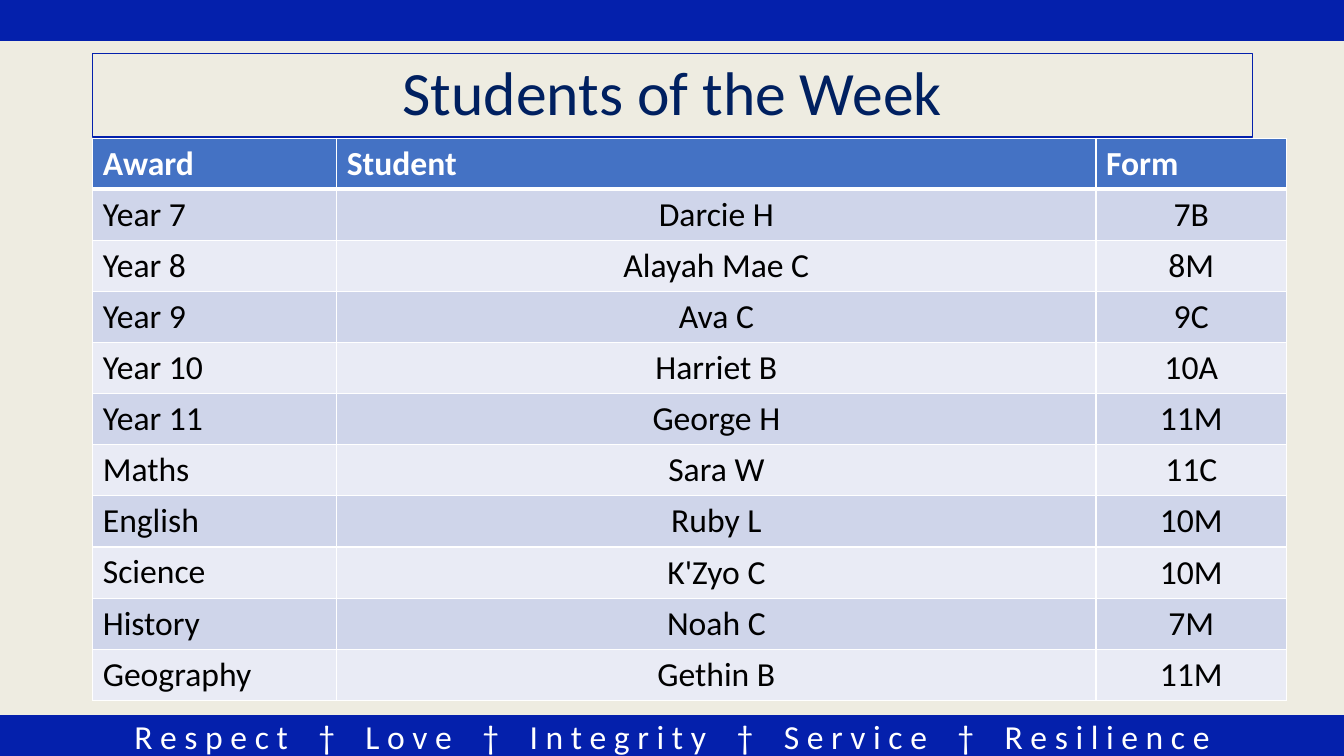
from lxml import etree
from pptx import Presentation
from pptx import util as u
from pptx.dml.color import RGBColor
from pptx.enum import shapes, text
from pptx.oxml.ns import qn

COLOURS = {
    "background": "EEECE1",
    "band": "0420AC",
    "title": "002060",
    "white": "FFFFFF",
    "black": "000000",
    "header": "4472C4",
    "odd_row": "CFD5EA",
    "even_row": "E9EBF5",
}
FONT = "Calibri"
VALUES = ["Respect", "Love", "Integrity", "Service", "Resilience"]
HEADINGS = ["Award", "Student", "Form"]
AWARDS = [
    ("Year 7", "Darcie H", "7B"),
    ("Year 8", "Alayah Mae C", "8M"),
    ("Year 9", "Ava C", "9C"),
    ("Year 10", "Harriet B", "10A"),
    ("Year 11", "George H", "11M"),
    ("Maths", "Sara W", "11C"),
    ("English", "Ruby L", "10M"),
    ("Science", "K'Zyo C", "10M"),
    ("History", "Noah C", "7M"),
    ("Geography", "Gethin B", "11M"),
]
COLUMN_SHARES = [0.2044, 0.636, 0.1596]


def colour(name):
    return RGBColor.from_string(COLOURS[name])


def style(paragraph, size, colour_name, alignment, bold=False):
    paragraph.alignment = alignment
    paragraph.font.name = FONT
    paragraph.font.size = u.Pt(size)
    paragraph.font.bold = bold
    paragraph.font.color.rgb = colour(colour_name)


def add_box(slide, left, top, width, height, line_width, fill=None):
    shape = slide.shapes.add_shape(
        shapes.MSO_SHAPE.RECTANGLE,
        u.Inches(left), u.Inches(top), u.Inches(width), u.Inches(height))
    shape.shadow.inherit = False
    if fill:
        shape.fill.solid()
        shape.fill.fore_color.rgb = colour(fill)
    else:
        shape.fill.background()
    shape.line.color.rgb = colour("band")
    shape.line.width = u.Pt(line_width)
    shape.text_frame.vertical_anchor = text.MSO_ANCHOR.MIDDLE
    return shape


def add_band(slide, left, top, width, height):
    return add_box(slide, left, top, width, height, 1, "band")


def add_values_band(slide, left, top, width, height):
    shape = add_band(slide, left, top, width, height)
    paragraph = shape.text_frame.paragraphs[0]
    style(paragraph, 24, "white", text.PP_ALIGN.CENTER)
    for index, value in enumerate(VALUES):
        spaced_word = " ".join(value)
        if index:
            dagger = paragraph.add_run()
            dagger.text = " †"
            dagger.font._element.set("spc", "1630")
            spaced_word = " " + spaced_word
        paragraph.add_run().text = spaced_word


def add_title(slide, left, top, width, height):
    shape = add_box(slide, left, top, width, height, 0.75)
    paragraph = shape.text_frame.paragraphs[0]
    paragraph.text = "Students of the Week"
    paragraph.line_spacing = 0.9
    style(paragraph, 44, "title", text.PP_ALIGN.CENTER)


def set_borders(cell, bottom_width):
    properties = cell._tc.get_or_add_tcPr()
    widths = {"a:lnL": 1, "a:lnR": 1, "a:lnT": 1, "a:lnB": bottom_width}
    for position, (tag, width) in enumerate(widths.items()):
        line = etree.Element(qn(tag), w=str(u.Pt(width)))
        fill = etree.SubElement(line, qn("a:solidFill"))
        etree.SubElement(fill, qn("a:srgbClr"), val=COLOURS["white"])
        properties.insert(position, line)


def fill_cell(cell, content, row, column):
    is_header = row == 0
    cell.text = content
    cell.fill.solid()
    fill = "header" if is_header else "odd_row" if row % 2 else "even_row"
    cell.fill.fore_color.rgb = colour(fill)
    set_borders(cell, 3 if is_header else 1)
    alignment = text.PP_ALIGN.LEFT
    if column and not is_header:
        alignment = text.PP_ALIGN.CENTER
        cell.vertical_anchor = text.MSO_ANCHOR.BOTTOM
        cell.margin_left = cell.margin_top = cell.margin_right = u.Inches(0.01)
        cell.margin_bottom = u.Inches(0.05)
    style(cell.text_frame.paragraphs[0], 24,
          "white" if is_header else "black", alignment, is_header)


def add_awards_table(slide, left, top, width, height):
    rows = [HEADINGS, *AWARDS]
    table = slide.shapes.add_table(
        len(rows), len(HEADINGS),
        u.Inches(left), u.Inches(top), u.Inches(width), u.Inches(height)).table
    for column, share in zip(table.columns, COLUMN_SHARES):
        column.width = u.Inches(width * share)
    for row, contents in enumerate(rows):
        for column, content in enumerate(contents):
            fill_cell(table.cell(row, column), content, row, column)


def main():
    presentation = Presentation()
    presentation.slide_width = u.Inches(13.33)
    presentation.slide_height = u.Inches(7.5)
    slide = presentation.slides.add_slide(presentation.slide_layouts[6])
    slide.background.fill.solid()
    slide.background.fill.fore_color.rgb = colour("background")
    add_values_band(slide, 0, 7.1, 13.33, 0.4)
    add_band(slide, 0, 0, 13.33, 0.4)
    add_title(slide, 0.92, 0.53, 11.5, 0.83)
    add_awards_table(slide, 0.92, 1.37, 11.84, 5.5)
    presentation.save("out.pptx")


if __name__ == "__main__":
    main()
